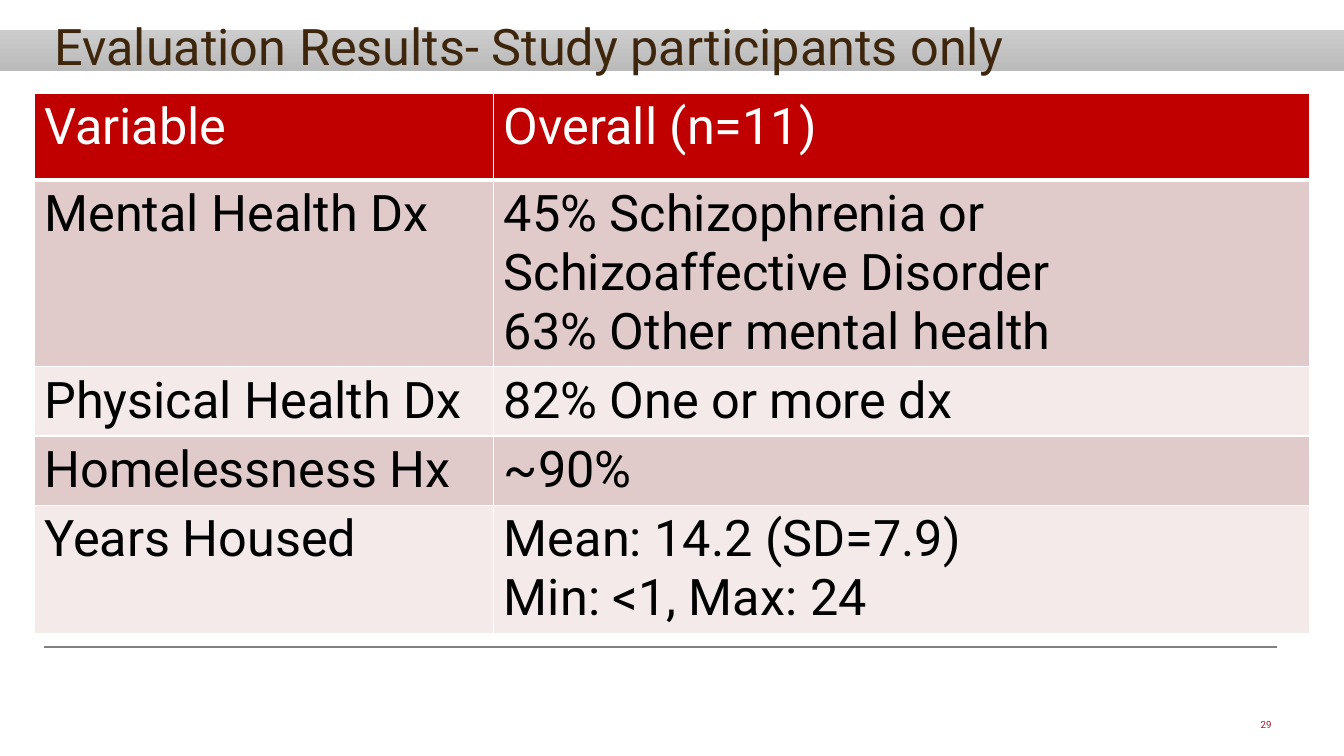
"""Build the evaluation results slide: a banded heading, a results table and a footer."""
from dataclasses import dataclass

from lxml.etree import SubElement
from pptx import Presentation
from pptx.dml.color import RGBColor
from pptx.enum.shapes import MSO_CONNECTOR, MSO_SHAPE
from pptx.enum.text import MSO_ANCHOR, MSO_AUTO_SIZE, PP_ALIGN
from pptx.oxml import parse_xml
from pptx.oxml.ns import nsdecls, qn
from pptx.util import Emu, Inches, Pt

WIDTH, HEIGHT = Inches(13.33), Inches(7.5)


@dataclass(frozen=True)
class Theme:
    """Colours and type sizes of the slide."""
    font: str = "Roboto"
    title: str = "3E260C"
    band: tuple[str, str] = ("CCCCCC", "BABABA")
    rule: str = "808080"
    header: str = "C00000"
    dark_row: str = "D7B9B7"
    light_row: str = "EDDFDE"
    white: str = "FFFFFF"
    black: str = "000000"
    number: str = "9D1B29"
    large: int = 36
    small: int = 7


@dataclass(frozen=True)
class Box:
    """A frame in percent of the slide's width and height."""
    left: float
    top: float
    width: float
    height: float

    def emu(self) -> tuple[Emu, Emu, Emu, Emu]:
        """Return left, top, width and height as lengths."""
        return across(self.left), down(self.top), across(self.width), down(self.height)


@dataclass(frozen=True)
class Row:
    """A table row: height in percent, label, result lines and look."""
    height: float
    label: str
    results: tuple[str, ...]
    fill: str
    opacity: int
    ink: str = "000000"
    bottom: int = 1


THEME = Theme()
COLUMNS = (34.2, 60.69)
ROWS = (
    Row(11.47, "Variable", ("Overall (n=11)",), THEME.header, 100, THEME.white, 3),
    Row(24.53, "Mental Health Dx",
        ("45% Schizophrenia or Schizoaffective Disorder", "63% Other mental health"),
        THEME.dark_row, 73),
    Row(9.16, "Physical Health Dx", ("82% One or more dx",), THEME.light_row, 64),
    Row(9.16, "Homelessness Hx", ("~90%",), THEME.dark_row, 73),
    Row(16.8, "Years Housed", ("Mean: 14.2 (SD=7.9)", "Min: <1, Max: 24"),
        THEME.light_row, 65),
)


def across(percent: float) -> Emu:
    """Convert a share of the slide's width."""
    return Emu(round(WIDTH * percent / 100))


def down(percent: float) -> Emu:
    """Convert a share of the slide's height."""
    return Emu(round(HEIGHT * percent / 100))


def write(tf, lines: tuple[str, ...], size: int, color: str, align=PP_ALIGN.LEFT) -> None:
    """Write one paragraph per line."""
    for i, line in enumerate(lines):
        p = tf.add_paragraph() if i else tf.paragraphs[0]
        p.alignment = align
        r = p.add_run()
        r.text = line
        r.font.name = THEME.font
        r.font.size = Pt(size)
        r.font.color.rgb = RGBColor.from_string(color)


def draw_title(s, box: Box, text: str) -> None:
    """Place the title in its placeholder."""
    sp = s.shapes.title
    sp.left, sp.top, sp.width, sp.height = box.emu()
    tf = sp.text_frame
    tf.word_wrap = True
    tf.auto_size = MSO_AUTO_SIZE.NONE
    tf.vertical_anchor = MSO_ANCHOR.MIDDLE
    write(tf, (text,), THEME.large, THEME.title)
    tf.paragraphs[0].line_spacing = 0.8


def draw_band(s, box: Box) -> None:
    """Draw the gradient band behind the title."""
    sp = s.shapes.add_shape(MSO_SHAPE.RECTANGLE, *box.emu())
    sp.shadow.inherit = False
    sp.line.fill.background()
    sp.fill.gradient()
    sp.fill.gradient_angle = 270
    for i, (stop, color) in enumerate(zip(sp.fill.gradient_stops, THEME.band)):
        stop.position = i
        stop.color.rgb = RGBColor.from_string(color)
    s.shapes.title.element.addprevious(sp.element)


def draw_rule(s, left: float, right: float, top: float) -> None:
    """Draw the thin footer rule."""
    cx = s.shapes.add_connector(MSO_CONNECTOR.STRAIGHT, across(left), down(top),
                                across(right), down(top))
    cx.line.color.rgb = RGBColor.from_string(THEME.rule)
    cx.line.width = Pt(1)
    SubElement(cx.element.spPr, qn("a:effectLst"))


def style_cell(cell, row: Row, top: int) -> None:
    """Fill a cell and draw its white borders."""
    cell.fill.solid()
    cell.fill.fore_color.rgb = RGBColor.from_string(row.fill)
    props = cell._tc.get_or_add_tcPr()
    if row.opacity < 100:
        alpha = SubElement(props.find(".//" + qn("a:srgbClr")), qn("a:alpha"))
        alpha.set("val", str(row.opacity * 1000))
    widths = {"lnL": 1, "lnR": 1, "lnT": top, "lnB": row.bottom}
    for i, (side, width) in enumerate(widths.items()):
        props.insert(i, parse_xml(
            f'<a:{side} {nsdecls("a")} w="{Pt(width)}"><a:solidFill>'
            f'<a:srgbClr val="{THEME.white}"/></a:solidFill></a:{side}>'))


def draw_table(s, left: float, top: float) -> None:
    """Draw the results table."""
    box = Box(left, top, sum(COLUMNS), sum(row.height for row in ROWS))
    table = s.shapes.add_table(len(ROWS), len(COLUMNS), *box.emu()).table
    for column, width in zip(table.columns, COLUMNS):
        column.width = across(width)
    edge = 1
    for i, row in enumerate(ROWS):
        table.rows[i].height = down(row.height)
        for cell, lines in zip(table.rows[i].cells, ((row.label,), row.results)):
            write(cell.text_frame, lines, THEME.large, row.ink)
            style_cell(cell, row, edge)
        edge = row.bottom


def draw_number(s, box: Box, text: str) -> None:
    """Write the slide number."""
    tf = s.shapes.add_textbox(*box.emu()).text_frame
    tf.word_wrap = True
    write(tf, (text,), THEME.small, THEME.number, PP_ALIGN.CENTER)


def main() -> None:
    """Build and save the slide."""
    prs = Presentation()
    prs.slide_width, prs.slide_height = WIDTH, HEIGHT
    s = prs.slides.add_slide(prs.slide_layouts[5])
    draw_title(s, Box(3.3, 1.73, 91.7, 10), "Evaluation Results- Study participants only")
    draw_band(s, Box(0, 4, 100, 5.4))
    draw_rule(s, 3.3, 95, 85.6)
    draw_table(s, 2.55, 12.3)
    draw_number(s, Box(92.55, 94.4, 3.3, 2.93), "29")
    prs.save("out.pptx")


if __name__ == "__main__":
    main()
